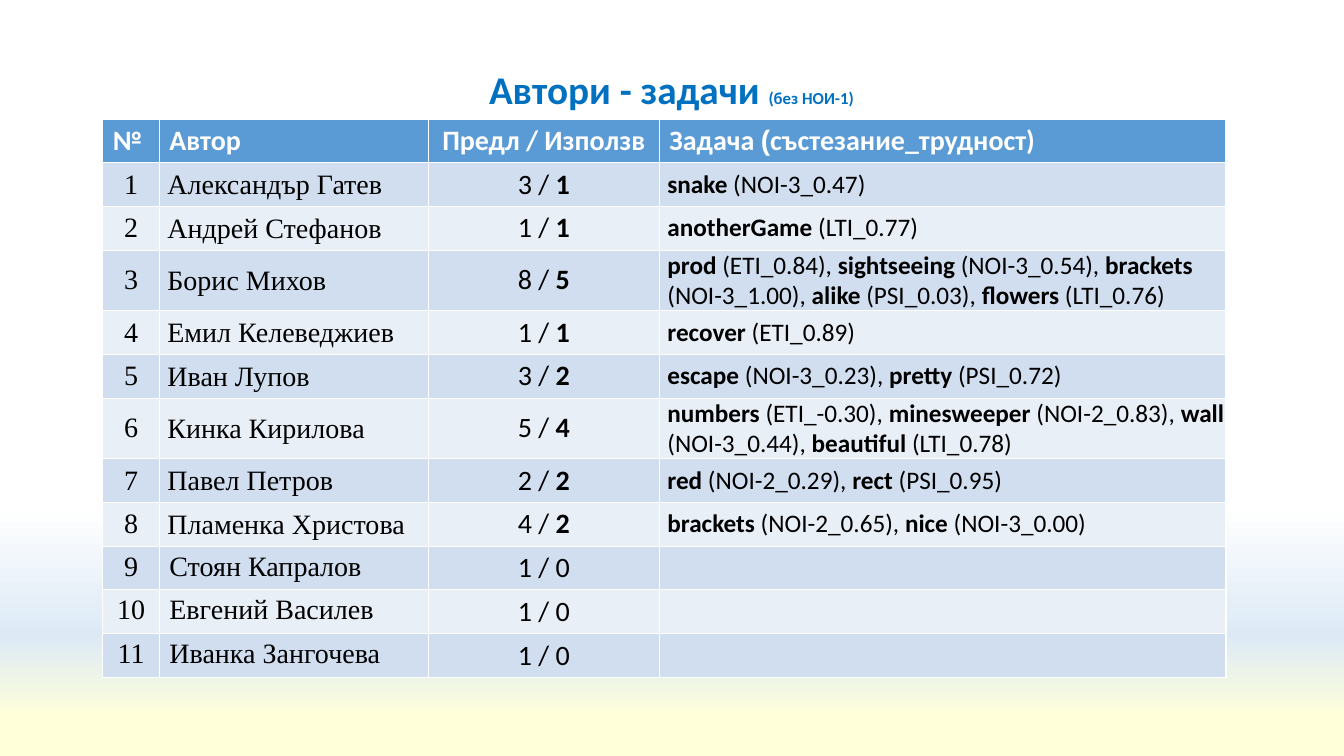
from lxml.etree import SubElement
from pptx import Presentation
from pptx.dml.color import RGBColor
from pptx.enum.text import MSO_ANCHOR, PP_ALIGN
from pptx.oxml.ns import qn
from pptx.util import Inches, Pt

# Content
TITLE = [("Автори - задачи ", 28), ("(без НОИ-1)", 12)]
HEADS = ["№", "Автор", "Предл / Използв", "Задача (състезание_трудност)"]
# author, proposed, used tasks with contest and difficulty
ROWS = [
    ("Александър Гатев", 3, [("snake", "NOI-3_0.47")]),
    ("Андрей Стефанов", 1, [("anotherGame", "LTI_0.77")]),
    ("Борис Михов", 8, [
        ("prod", "ETI_0.84"), ("sightseeing", "NOI-3_0.54"),
        ("brackets", "NOI-3_1.00"), ("alike", "PSI_0.03"),
        ("flowers", "LTI_0.76")]),
    ("Емил Келеведжиев", 1, [("recover", "ETI_0.89")]),
    ("Иван Лупов", 3, [("escape", "NOI-3_0.23"), ("pretty", "PSI_0.72")]),
    ("Кинка Кирилова", 5, [
        ("numbers", "ETI_-0.30"), ("minesweeper", "NOI-2_0.83"),
        ("wall", "NOI-3_0.44"), ("beautiful", "LTI_0.78")]),
    ("Павел Петров", 2, [("red", "NOI-2_0.29"), ("rect", "PSI_0.95")]),
    ("Пламенка Христова", 4, [
        ("brackets", "NOI-2_0.65"), ("nice", "NOI-3_0.00")]),
    ("Стоян Капралов", 1, []),
    ("Евгений Василев", 1, []),
    ("Иванка Зангочева", 1, []),
]

# Format values
BLUE = RGBColor(0x00, 0x70, 0xC0)
HEAD = RGBColor(0x5B, 0x9B, 0xD5)
BANDS = [RGBColor(0xD0, 0xDE, 0xEF), RGBColor(0xE9, 0xEF, 0xF7)]
WHITE = RGBColor(0xFF, 0xFF, 0xFF)
BLACK = RGBColor(0x00, 0x00, 0x00)
STOPS = [(0, "FFFFFF"), (67, "FFFFFF"), (84, "DDEAF6"),
         (95, "FFFFD9"), (100, "FFFFD9")]
WIDTHS = [0.56, 2.67, 2.29, 5.62]
ROW_H = 0.41
SANS, SERIF = "Calibri", "Times New Roman"
WIDE = (0.1, 0.05, 0.1, 0.05)
NAME = (0.08, 0.01, 0.01, 0)
NONE = (0, 0, 0, 0)
TASK = (0.08, 0, 0, 0)
SIDES = ("left", "top", "right", "bottom")
MID, TOP = MSO_ANCHOR.MIDDLE, MSO_ANCHOR.TOP
LEFT, MIDDLE = PP_ALIGN.LEFT, PP_ALIGN.CENTER


def add_run(para, text, size, color, bold=False, face=SANS):
    run = para.add_run()
    run.text = text
    run.font.color.rgb = color
    look = {"name": face, "size": Pt(size), "bold": bold}
    for key, val in look.items():
        setattr(run.font, key, val)


def fill_cell(cell, runs, fill, pad, anchor=MID, align=LEFT,
              size=20, color=BLACK, face=SANS):
    cell.fill.solid()
    cell.fill.fore_color.rgb = fill
    look = {f"margin_{side}": Inches(gap) for side, gap in zip(SIDES, pad)}
    look["vertical_anchor"] = anchor
    for key, val in look.items():
        setattr(cell, key, val)
    para = cell.text_frame.paragraphs[0]
    para.alignment = align
    for text, bold in runs:
        add_run(para, text, size, color, bold, face)


def task_runs(tasks):
    runs = []
    for num, (task, tag) in enumerate(tasks, 1):
        tail = ", " if num < len(tasks) else ""
        runs += [(task, True), (f" ({tag}){tail}", False)]
    return runs


def set_back(slide):
    fill = slide.background.fill
    fill.gradient()
    fill.gradient_angle = 270
    stops = next(slide.background._cSld.iter(qn("a:gsLst")))
    for old in list(stops):
        stops.remove(old)
    for pos, color in STOPS:
        stop = SubElement(stops, qn("a:gs"), pos=str(pos * 1000))
        SubElement(stop, qn("a:srgbClr"), val=color)


def add_title(slide):
    box = slide.shapes.add_textbox(
        Inches(2.35), Inches(0.4), Inches(8.62), Inches(1.02))
    frame = box.text_frame
    frame.word_wrap = True
    frame.vertical_anchor = MID
    para = frame.paragraphs[0]
    para.alignment = MIDDLE
    para.line_spacing = 0.9
    for text, size in TITLE:
        add_run(para, text, size, BLUE, True)


def add_grid(slide):
    count = len(ROWS) + 1
    table = slide.shapes.add_table(
        count, len(WIDTHS), Inches(1.02), Inches(1.18),
        Inches(sum(WIDTHS)), Inches(ROW_H * count)).table
    for col, width in zip(table.columns, WIDTHS):
        col.width = Inches(width)
    for row in table.rows:
        row.height = Inches(ROW_H)

    # Header
    for col, text in enumerate(HEADS):
        before, mark, after = text.partition("(")
        cell = table.cell(0, col)
        fill_cell(cell, [(part, True) for part in (before, mark, after) if part],
                  HEAD, WIDE, TOP, MIDDLE if col == 2 else LEFT, color=WHITE)
        if mark:
            cell.text_frame.paragraphs[0].runs[1].font.name = "Arial"

    # Authors
    for num, (name, total, tasks) in enumerate(ROWS, 1):
        band = BANDS[(num - 1) % 2]
        used = len(tasks)
        anchor = MID if used else TOP
        cells = table.rows[num].cells
        fill_cell(cells[0], [(str(num), False)], band, WIDE, anchor, MIDDLE,
                  face=SERIF)
        fill_cell(cells[1], [(name, False)], band, NAME if used else WIDE,
                  anchor, face=SERIF)
        fill_cell(cells[2], [(f"{total} / ", False), (str(used), used > 0)],
                  band, NONE, align=MIDDLE)
        fill_cell(cells[3], task_runs(tasks), band, TASK, size=18)


def main():
    deck = Presentation()
    deck.slide_width, deck.slide_height = Inches(13.33), Inches(7.5)
    slide = deck.slides.add_slide(deck.slide_layouts[6])
    set_back(slide)
    add_title(slide)
    add_grid(slide)
    deck.save("out.pptx")


if __name__ == "__main__":
    main()
